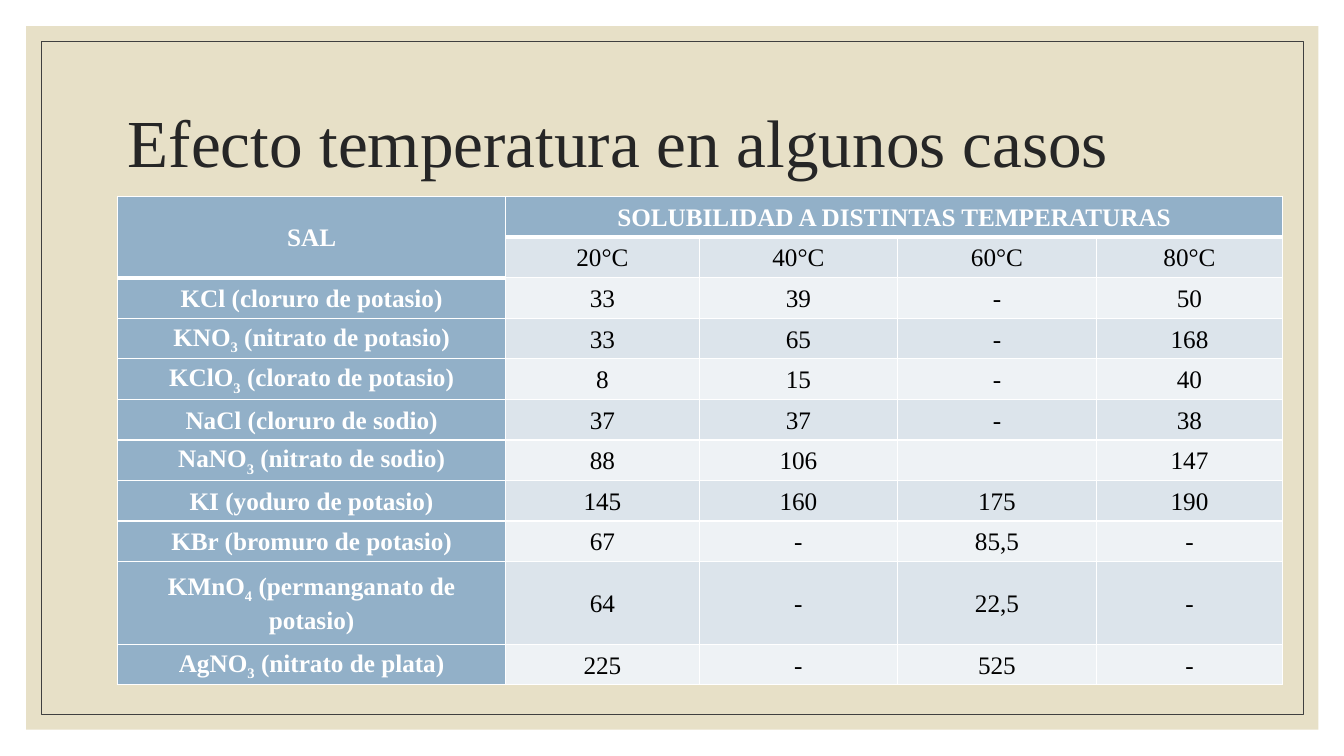
from dataclasses import dataclass

import lxml.etree
import pptx
import pptx.dml.color
import pptx.enum.shapes
import pptx.enum.text
import pptx.oxml.ns
import pptx.util

COLORS = {
    "panel": "E7E0C7",
    "frame": "404040",
    "title": "262626",
    "header": "92B0C8",
    "dark_band": "DCE4EB",
    "light_band": "EEF2F5",
    "black": "000000",
    "white": "FFFFFF",
}
FONT = "Times New Roman"

# The slide is a grid of 160 columns by 90 rows of square units.
UNIT = pptx.util.Inches(7.5) / 90
COLUMN_WIDTHS = (46.2, 23.04, 23.64, 23.64, 22.2)
ROW_HEIGHT = 4.83
TALL_ROW_HEIGHT = 9.84
TABLE_LEFT, TABLE_TOP = 14, 23.4


@dataclass(frozen=True)
class Area:
    left: float
    top: float
    width: float
    height: float


@dataclass(frozen=True)
class Salt:
    formula: str
    subscript: str
    name: str
    solubilities: tuple[str, ...]
    height: float = ROW_HEIGHT


PANEL = Area(3.12, 3.12, 153.84, 83.76)
FRAME = Area(4.92, 4.92, 150.24, 80.16)
TITLE = Area(14, 8.4, 132, 18)

TEMPERATURES = ("20°C", "40°C", "60°C", "80°C")
SALTS = (
    Salt("KCl", "", "cloruro de potasio", ("33", "39", "-", "50")),
    Salt("KNO", "3", "nitrato de potasio", ("33", "65", "-", "168")),
    Salt("KClO", "3", "clorato de potasio", ("8", "15", "-", "40")),
    Salt("NaCl", "", "cloruro de sodio", ("37", "37", "-", "38")),
    Salt("NaNO", "3", "nitrato de sodio", ("88", "106", "", "147")),
    Salt("KI", "", "yoduro de potasio", ("145", "160", "175", "190")),
    Salt("KBr", "", "bromuro de potasio", ("67", "-", "85,5", "-")),
    Salt("KMnO", "4", "permanganato de potasio", ("64", "-", "22,5", "-"), TALL_ROW_HEIGHT),
    Salt("AgNO", "3", "nitrato de plata", ("225", "-", "525", "-")),
)


def units(count: float) -> pptx.util.Emu:
    return pptx.util.Emu(round(count * UNIT))


def color(name: str) -> pptx.dml.color.RGBColor:
    return pptx.dml.color.RGBColor.from_string(COLORS[name])


def place(shape, area: Area) -> None:
    shape.left, shape.top = units(area.left), units(area.top)
    shape.width, shape.height = units(area.width), units(area.height)


def style_font(font, size: float, color_name: str, bold: bool = False) -> None:
    font.name = FONT
    font.size = pptx.util.Pt(size)
    font.bold = bold
    font.color.rgb = color(color_name)


def add_rectangle(page, area: Area):
    box = page.shapes.add_shape(pptx.enum.shapes.MSO_SHAPE.RECTANGLE, 0, 0, 0, 0)
    place(box, area)
    box.shadow.inherit = False
    return box


def add_background(page) -> None:
    panel = add_rectangle(page, PANEL)
    panel.fill.solid()
    panel.fill.fore_color.rgb = color("panel")
    panel.line.fill.background()

    frame = add_rectangle(page, FRAME)
    frame.fill.background()
    frame.line.color.rgb = color("frame")
    frame.line.width = pptx.util.Pt(0.5)


def add_title(page) -> None:
    """Fill the title placeholder and bring it in front of the background."""
    title = page.shapes.title
    place(title, TITLE)
    title.text_frame.text = "Efecto temperatura en algunos casos"
    title.text_frame.word_wrap = True
    title.text_frame.vertical_anchor = pptx.enum.text.MSO_ANCHOR.MIDDLE
    para = title.text_frame.paragraphs[0]
    para.alignment = pptx.enum.text.PP_ALIGN.LEFT
    para.line_spacing = 0.9
    style_font(para.font, 48, "title")
    title.element.getparent().append(title.element)


def set_borders(cell, bottom_width: float) -> None:
    qn = pptx.oxml.ns.qn
    properties = cell._tc.get_or_add_tcPr()
    for side, width in (("L", 1), ("R", 1), ("T", 1), ("B", bottom_width)):
        line = lxml.etree.SubElement(properties, qn(f"a:ln{side}"), w=str(pptx.util.Pt(width)))
        fill = lxml.etree.SubElement(line, qn("a:solidFill"))
        lxml.etree.SubElement(fill, qn("a:srgbClr"), val=COLORS["white"])


def style_cell(cell, fill: str, bottom_width: float = 1) -> None:
    set_borders(cell, bottom_width)
    cell.fill.solid()
    cell.fill.fore_color.rgb = color(fill)
    cell.vertical_anchor = pptx.enum.text.MSO_ANCHOR.MIDDLE
    cell.margin_left = cell.margin_right = pptx.util.Inches(0.07)
    cell.margin_top = cell.margin_bottom = 0
    para = cell.text_frame.paragraphs[0]
    para.alignment = pptx.enum.text.PP_ALIGN.CENTER
    para.line_spacing = 1.07
    is_header = fill == "header"
    style_font(para.font, 18, "white" if is_header else "black", is_header)


def write_salt(cell, salt: Salt) -> None:
    para = cell.text_frame.paragraphs[0]
    if not salt.subscript:
        para.add_run().text = f"{salt.formula} ({salt.name})"
        return
    for text in (salt.formula, salt.subscript, f" ({salt.name})"):
        span = para.add_run()
        span.text = text
        if text == salt.subscript:
            span.font._element.set("baseline", "-25000")


def add_solubility_table(page) -> None:
    heights = [ROW_HEIGHT] * 2 + [salt.height for salt in SALTS]
    graphic = page.shapes.add_table(len(heights), len(COLUMN_WIDTHS), 0, 0, 0, 0)
    place(graphic, Area(TABLE_LEFT, TABLE_TOP, sum(COLUMN_WIDTHS), sum(heights)))
    table = graphic.table
    table.first_row = table.horz_banding = False
    for column, width in zip(table.columns, COLUMN_WIDTHS):
        column.width = units(width)
    for row, height in zip(table.rows, heights):
        row.height = units(height)

    table.cell(0, 0).text = "SAL"
    table.cell(0, 1).text = "SOLUBILIDAD A DISTINTAS TEMPERATURAS"
    value_rows = (TEMPERATURES, *(salt.solubilities for salt in SALTS))
    for row, values in enumerate(value_rows, start=1):
        for column, value in enumerate(values, start=1):
            table.cell(row, column).text = value
    for row, salt in enumerate(SALTS, start=2):
        write_salt(table.cell(row, 0), salt)

    for row in range(len(heights)):
        band = "dark_band" if row % 2 else "light_band"
        for column in range(len(COLUMN_WIDTHS)):
            is_header = row == 0 or column == 0
            is_thick = row == 0 or (row, column) == (1, 0)
            style_cell(table.cell(row, column), "header" if is_header else band, 3 if is_thick else 1)
    table.cell(0, 0).merge(table.cell(1, 0))
    table.cell(0, 1).merge(table.cell(0, len(COLUMN_WIDTHS) - 1))


def main() -> None:
    deck = pptx.Presentation()
    deck.slide_width, deck.slide_height = units(160), units(90)
    page = deck.slides.add_slide(deck.slide_layouts[5])
    add_background(page)
    add_title(page)
    add_solubility_table(page)
    deck.save("out.pptx")


if __name__ == "__main__":
    main()
